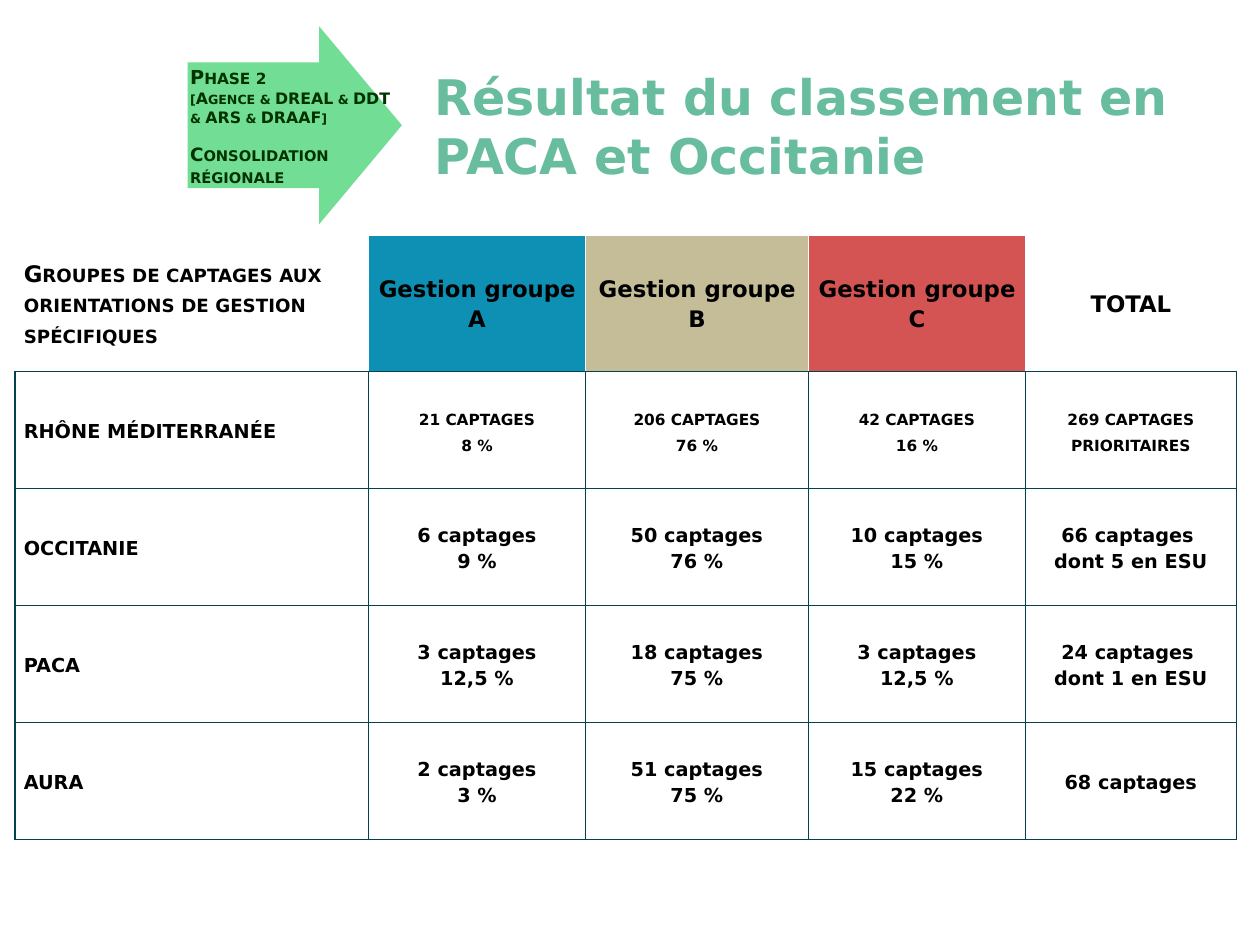
from dataclasses import dataclass
from typing import Optional

from lxml.etree import SubElement
from pptx import Presentation
from pptx.dml.color import RGBColor
from pptx.enum.shapes import MSO_SHAPE
from pptx.enum.text import MSO_ANCHOR, MSO_AUTO_SIZE, PP_ALIGN
from pptx.oxml.ns import qn
from pptx.util import Pt


@dataclass(frozen=True)
class Theme:
    font: str = "DejaVu Sans"
    title: str = "68BD9E"
    arrow: str = "71DD95"
    phase: str = "003300"
    ink: str = "000000"
    white: str = "FFFFFF"
    rule: str = "064151"
    group_a: str = "0D90B3"
    group_b: str = "C4BD97"
    group_c: str = "C00000"
    title_size: float = 28
    header_size: float = 13
    body_size: float = 11
    phase_size: float = 10.5
    partner_size: float = 9


THEME = Theme()


@dataclass(frozen=True)
class Style:
    size: float
    color: str = THEME.ink
    small_caps: bool = False


@dataclass(frozen=True)
class Line:
    text: str
    style: Style
    space_before: float = 0


@dataclass(frozen=True)
class Header:
    text: str
    width: float
    fill: Optional[str] = None
    opacity: int = 100


@dataclass(frozen=True)
class Region:
    name: str
    values: tuple[tuple[str, ...], ...]
    small_caps: bool = False


HEADERS = (
    Header("Groupes de captages aux orientations de gestion spécifiques", 202),
    Header("Gestion groupe A", 124, THEME.group_a),
    Header("Gestion groupe B", 127.4, THEME.group_b),
    Header("Gestion groupe C", 124, THEME.group_c, 67),
    Header("TOTAL", 120.6, THEME.white),
)
REGIONS = (
    Region("RHÔNE MÉDITERRANÉE", (("21 captages", "8 %"), ("206 captages", "76 %"),
                                  ("42 captages", "16 %"), ("269 captages prioritaires",)), True),
    Region("OCCITANIE", (("6 captages", "9 %"), ("50 captages", "76 %"),
                         ("10 captages", "15 %"), ("66 captages ", "dont 5 en ESU"))),
    Region("PACA", (("3 captages", "12,5 %"), ("18 captages", "75 %"),
                    ("3 captages", "12,5 %"), ("24 captages ", "dont 1 en ESU"))),
    Region("AURA", (("2 captages", "3 %"), ("51 captages", "75 %"),
                    ("15 captages", "22 %"), ("68 captages",))),
)
PHASE_LINES = (
    Line("Phase 2", Style(11, THEME.phase, True)),
    Line("[Agence & DREAL & DDT & ARS & DRAAF]", Style(THEME.partner_size, THEME.phase, True)),
    Line("Consolidation", Style(THEME.phase_size, THEME.phase, True), 9.3),
    Line("régionale", Style(THEME.phase_size, THEME.phase, True)),
)
HEADER_HEIGHT = 78
REGION_HEIGHT = 66.9
CELL_INSET = 5


def add_span(para, text: str, style: Style) -> None:
    span = para.add_run()
    span.text = text
    span.font.name = THEME.font
    span.font.size = Pt(style.size)
    span.font.bold = True
    span.font.color.rgb = RGBColor.from_string(style.color)
    if style.small_caps:
        span.font._element.set("cap", "small")


def write_lines(frame, lines, align=PP_ALIGN.LEFT, line_spacing: float = 1.0) -> None:
    for index, line in enumerate(lines):
        para = frame.add_paragraph() if index else frame.paragraphs[0]
        para.alignment = align
        para.line_spacing = line_spacing
        para.space_before = Pt(line.space_before)
        add_span(para, line.text, line.style)


def set_borders(cell, sides: str, bottom: str) -> None:
    properties = cell._tc.get_or_add_tcPr()
    for tag, color in (("lnL", sides), ("lnR", sides), ("lnT", sides), ("lnB", bottom)):
        border = SubElement(properties, qn(f"a:{tag}"), w=str(Pt(1)))
        fill = SubElement(border, qn("a:solidFill"))
        SubElement(fill, qn("a:srgbClr"), val=color)


def set_fill(cell, color: Optional[str], opacity: int = 100) -> None:
    if color is None:
        cell.fill.background()
        return
    cell.fill.solid()
    cell.fill.fore_color.rgb = RGBColor.from_string(color)
    if opacity < 100:
        color_element = cell._tc.tcPr.find(f".//{qn('a:solidFill')}[last()]")
        color_element = cell._tc.tcPr.find(f"{qn('a:solidFill')}/{qn('a:srgbClr')}")
        SubElement(color_element, qn("a:alpha"), val=str(opacity * 1000))


def write_cell(cell, column: int, lines) -> None:
    inset = 0 if column == len(HEADERS) - 1 else CELL_INSET
    cell.margin_left = cell.margin_right = Pt(inset)
    cell.margin_top = cell.margin_bottom = 0
    cell.vertical_anchor = MSO_ANCHOR.MIDDLE
    write_lines(cell.text_frame, lines, PP_ALIGN.CENTER if column else PP_ALIGN.LEFT, 1.15)


def add_title(page) -> None:
    title = page.shapes.title
    title.left, title.top, title.width, title.height = Pt(241.2), Pt(26.6), Pt(470.9), Pt(90)
    frame = title.text_frame
    frame.word_wrap = True
    frame.auto_size = MSO_AUTO_SIZE.NONE
    frame.vertical_anchor = MSO_ANCHOR.MIDDLE
    write_lines(frame, [Line("Résultat du classement en PACA et Occitanie",
                             Style(THEME.title_size, THEME.title))])


def add_phase_arrow(page) -> None:
    arrow = page.shapes.add_shape(MSO_SHAPE.RIGHT_ARROW, Pt(107.3), Pt(15.1), Pt(122.4), Pt(113))
    arrow.adjustments[0], arrow.adjustments[1] = 0.636, 0.418
    arrow.shadow.inherit = False
    arrow.fill.solid()
    arrow.fill.fore_color.rgb = RGBColor.from_string(THEME.arrow)
    arrow.line.fill.background()

    box = page.shapes.add_textbox(Pt(105.8), Pt(37.4), Pt(119), Pt(85))
    frame = box.text_frame
    frame.word_wrap = True
    frame.margin_left = Pt(2.9)
    frame.margin_top = frame.margin_right = frame.margin_bottom = 0
    write_lines(frame, PHASE_LINES)


def add_results_table(page) -> None:
    width = sum(header.width for header in HEADERS)
    height = HEADER_HEIGHT + REGION_HEIGHT * len(REGIONS)
    table = page.shapes.add_table(len(REGIONS) + 1, len(HEADERS),
                                  Pt(8.6), Pt(134.2), Pt(width), Pt(height)).table
    table.first_row = table.horz_banding = False

    table.rows[0].height = Pt(HEADER_HEIGHT)
    for column, header in enumerate(HEADERS):
        table.columns[column].width = Pt(header.width)
        cell = table.cell(0, column)
        set_borders(cell, THEME.white, THEME.rule)
        set_fill(cell, header.fill, header.opacity)
        style = Style(THEME.header_size, small_caps=column == 0)
        write_cell(cell, column, [Line(header.text, style)])

    for row, region in enumerate(REGIONS, start=1):
        table.rows[row].height = Pt(REGION_HEIGHT)
        for column, texts in enumerate(((region.name,), *region.values)):
            cell = table.cell(row, column)
            set_borders(cell, THEME.rule, THEME.rule)
            set_fill(cell, None)
            style = Style(THEME.body_size, small_caps=region.small_caps and column > 0)
            write_cell(cell, column, [Line(text, style) for text in texts])


def main() -> None:
    deck = Presentation()
    deck.slide_width, deck.slide_height = Pt(720), Pt(540)
    page = deck.slides.add_slide(deck.slide_layouts[5])
    add_title(page)
    add_phase_arrow(page)
    add_results_table(page)
    deck.save("out.pptx")


if __name__ == "__main__":
    main()
